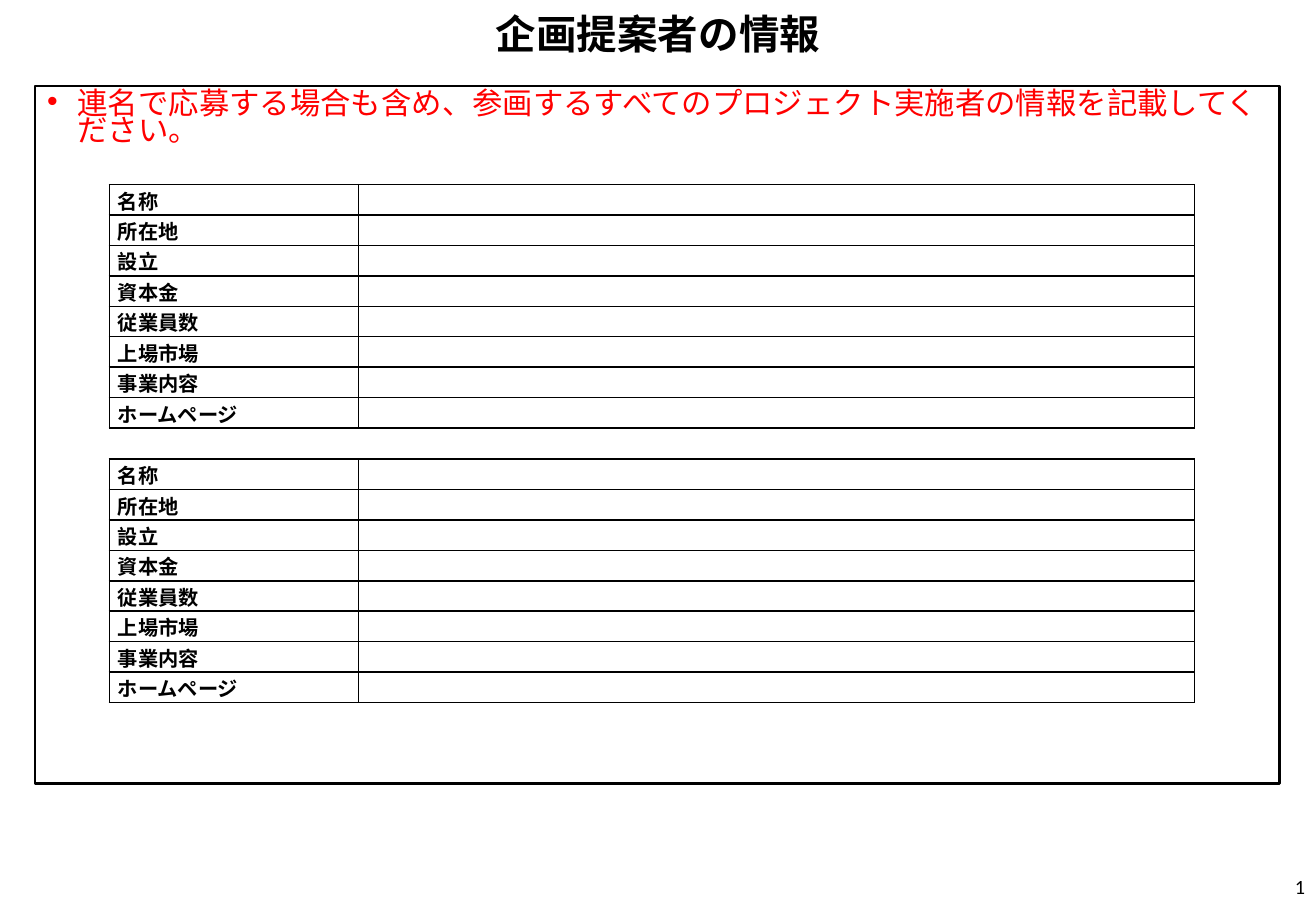
from lxml import etree
from pptx import Presentation
from pptx.dml.color import RGBColor
from pptx.enum import shapes, text
from pptx.oxml import ns
from pptx.util import Inches, Pt

TITLE = "企画提案者の情報"
GUIDANCE = "連名で応募する場合も含め、参画するすべてのプロジェクト実施者の情報を記載してください。"
PAGE_NUMBER = "1"
COMPANY_FIELDS = ["名称", "所在地", "設立", "資本金", "従業員数", "上場市場", "事業内容", "ホームページ"]
COMPANY_TOPS = [1.52, 3.78]
COLUMN_WIDTHS = [2.05, 6.88]
TABLE_LEFT, ROW_HEIGHT = 0.9, 0.25
COLORS = {"ink": "000000", "guidance": "FF0000", "paper": "FFFFFF"}
JAPANESE, LATIN = "Noto Sans CJK JP", "Calibri"


def color(name):
    """Return the named colour."""
    return RGBColor.from_string(COLORS[name])


def add_xml(parent, tag, **attributes):
    """Append a DrawingML element and return it."""
    return etree.SubElement(parent, ns.qn(tag), attributes)


def style(paragraph, size, align, ink="ink", bold=False, face=JAPANESE, spacing=None):
    """Set the font, alignment and line spacing of a paragraph."""
    paragraph.alignment = align
    paragraph.line_spacing = spacing
    font = paragraph.font
    font.size, font.bold, font.name = Pt(size), bold, face
    font.color.rgb = color(ink)
    add_xml(font._element, "a:ea", typeface=face)


def indent(paragraph, width):
    """Give a paragraph a hanging indent."""
    properties = paragraph._p.get_or_add_pPr()
    properties.set("marL", str(Inches(width)))
    properties.set("indent", str(-Inches(width)))
    return properties


def add_label(slide, box, words, **look):
    """Add a vertically centred line of text."""
    frame = slide.shapes.add_textbox(*map(Inches, box)).text_frame
    frame.word_wrap = True
    frame.vertical_anchor = text.MSO_ANCHOR.MIDDLE
    frame.text = words
    style(frame.paragraphs[0], **look)


def add_guidance(slide):
    """Add the outlined panel with its bulleted guidance."""
    panel = slide.shapes.add_shape(
        shapes.MSO_SHAPE.RECTANGLE, *map(Inches, (0.29, 0.71, 10.24, 5.74)))
    panel.shadow.inherit = False
    panel.fill.background()
    panel.line.color.rgb = color("ink")
    panel.line.width = Pt(1.5)
    frame = panel.text_frame
    frame.word_wrap = True
    frame.vertical_anchor = text.MSO_ANCHOR.TOP
    frame.text = GUIDANCE
    guidance = frame.paragraphs[0]
    style(guidance, 18, text.PP_ALIGN.LEFT, ink="guidance", spacing=0.75)
    properties = indent(guidance, 0.25)
    font = guidance.font._element
    add_xml(properties, "a:buFont", typeface="Arial")
    add_xml(properties, "a:buChar", char="•")
    properties.append(font)


def fill_cell(cell, words):
    """Write a cell and give it a white fill and thin black borders."""
    cell.margin_left = cell.margin_right = Inches(0.07)
    cell.margin_top = cell.margin_bottom = 0
    cell.text = words
    entry = cell.text_frame.paragraphs[0]
    style(entry, 12, text.PP_ALIGN.JUSTIFY, bold=True, spacing=Pt(18))
    indent(entry, 0.15)
    properties = cell._tc.get_or_add_tcPr()
    for side in ("a:lnL", "a:lnR", "a:lnT", "a:lnB"):
        border = add_xml(properties, side, w=str(Pt(1)))
        add_xml(add_xml(border, "a:solidFill"), "a:srgbClr", val=COLORS["ink"])
    cell.fill.solid()
    cell.fill.fore_color.rgb = color("paper")


def add_company(slide, top):
    """Add a blank company information table."""
    box = (TABLE_LEFT, top, sum(COLUMN_WIDTHS), ROW_HEIGHT * len(COMPANY_FIELDS))
    company = slide.shapes.add_table(
        len(COMPANY_FIELDS), len(COLUMN_WIDTHS), *map(Inches, box)).table
    company.first_row = company.horz_banding = False
    for column, width in zip(company.columns, COLUMN_WIDTHS):
        column.width = Inches(width)
    for row, field in zip(company.rows, COMPANY_FIELDS):
        row.height = Inches(ROW_HEIGHT)
        for cell, words in zip(row.cells, (field, "")):
            fill_cell(cell, words)


def main():
    """Build the company information slide."""
    deck = Presentation()
    deck.slide_width, deck.slide_height = Inches(10.83), Inches(7.5)
    slide = deck.slides.add_slide(deck.slide_layouts[6])
    add_label(slide, (0, 0, 10.83, 0.61), TITLE, size=24,
              align=text.PP_ALIGN.CENTER, bold=True, spacing=0.85)
    add_label(slide, (8.4, 7.1, 2.44, 0.4), PAGE_NUMBER, size=12,
              align=text.PP_ALIGN.RIGHT, face=LATIN)
    add_guidance(slide)
    for top in COMPANY_TOPS:
        add_company(slide, top)
    deck.save("out.pptx")


if __name__ == "__main__":
    main()
